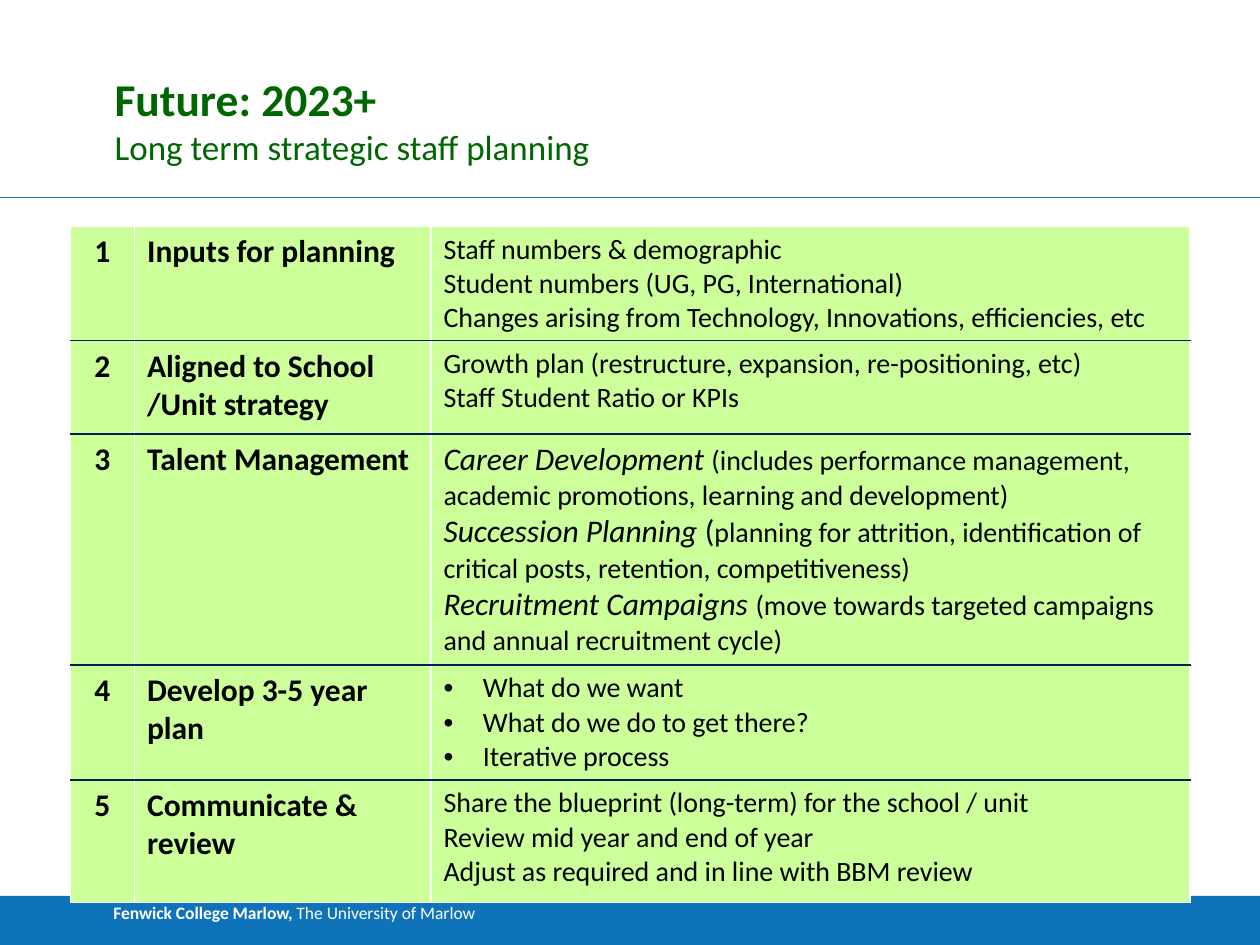
from lxml.etree import SubElement
from pptx import Presentation
from pptx.dml.color import RGBColor
from pptx.enum.shapes import MSO_CONNECTOR as Connector, MSO_SHAPE as Shape
from pptx.enum.text import MSO_ANCHOR as Anchor, PP_ALIGN as Align
from pptx.oxml.ns import qn
from pptx.util import Pt

WIDTH, HEIGHT = 720, 540
BLUE, NAVY, GREEN, LIME = "0E73B9", "002060", "006600", "CCFF99"
WHITE, BLACK = "FFFFFF", "000000"
COLUMNS = [36.7, 169.4, 433.7]
ROW_HEIGHTS = [65.5, 53.3, 132, 65.7, 70]

HEADING = dict(size=Pt(18), bold=True)
DETAIL = dict(size=Pt(16), bold=False)
TOPIC = dict(size=Pt(18), bold=False, italic=True)
LARGE = dict(size=Pt(18), bold=False)


def plain(*lines):
    return [[(line, DETAIL)] for line in lines]


ROWS = [
    ("Inputs for planning", plain(
        "Staff numbers & demographic",
        "Student numbers (UG, PG, International)",
        "Changes arising from Technology, Innovations, efficiencies, etc"), False),
    ("Aligned to School /Unit strategy", plain(
        "Growth plan (restructure, expansion, re-positioning, etc)",
        "Staff Student Ratio or KPIs"), False),
    ("Talent Management", [
        [("Career Development ", TOPIC),
         ("(includes performance management, academic promotions, "
          "learning and development)", DETAIL)],
        [("Succession Planning ", TOPIC), ("(", LARGE),
         ("planning for attrition, identification of critical posts, "
          "retention, competitiveness)", DETAIL)],
        [("Recruitment Campaigns ", TOPIC),
         ("(move towards targeted campaigns and annual recruitment cycle)", DETAIL)],
    ], False),
    ("Develop 3-5 year plan", plain(
        "What do we want", "What do we do to get there?", "Iterative process"), True),
    ("Communicate & review", plain(
        "Share the blueprint (long-term) for the school / unit",
        "Review mid year and end of year",
        "Adjust as required and in line with BBM review"), False),
]


def color(value):
    return RGBColor.from_string(value)


def set_all(target, values):
    for name, value in values.items():
        setattr(target, name, value)


def write(frame, paragraphs, ink, align=Align.LEFT, bulleted=False):
    for index, spans in enumerate(paragraphs):
        para = frame.add_paragraph() if index else frame.paragraphs[0]
        para.alignment = align
        if bulleted:
            add_bullet(para)
        for text, style in spans:
            span = para.add_run()
            span.text = text
            set_all(span.font, dict(name="Calibri", **style))
            span.font.color.rgb = color(ink)


def add_bullet(para):
    properties = para._p.get_or_add_pPr()
    properties.set("marL", str(Pt(22.5)))
    properties.set("indent", str(-Pt(22.5)))
    SubElement(properties, qn("a:buFont"), typeface="Arial")
    SubElement(properties, qn("a:buChar"), char="•")


def add_text(page, top, height, text, style, anchor):
    box = page.shapes.add_textbox(Pt(65.5), Pt(top), Pt(590), Pt(height))
    set_all(box.text_frame, dict(
        word_wrap=True, vertical_anchor=anchor, margin_left=0,
        margin_top=0, margin_right=0, margin_bottom=0))
    write(box.text_frame, [[(text, style)]], GREEN)


def add_footer(page):
    bar = page.shapes.add_shape(Shape.RECTANGLE, 0, Pt(512), Pt(WIDTH), Pt(28))
    bar.shadow.inherit = False
    bar.fill.solid()
    bar.fill.fore_color.rgb = color(BLUE)
    bar.line.fill.background()
    set_all(bar.text_frame, dict(
        word_wrap=True, vertical_anchor=Anchor.TOP, margin_left=Pt(64.8)))
    write(bar.text_frame, [[
        ("Fenwick College Marlow, ", dict(size=Pt(10), bold=True)),
        ("The University of Marlow", dict(size=Pt(10), bold=False)),
    ]], WHITE)


def add_rule(page, top):
    rule = page.shapes.add_connector(
        Connector.STRAIGHT, 0, Pt(top), Pt(WIDTH), Pt(top))
    rule.line.color.rgb = color(BLUE)
    rule.line.width = Pt(0.75)
    SubElement(rule._element.spPr, qn("a:effectLst"))


def style_cell(cell, top, bottom):
    properties = cell._tc.get_or_add_tcPr()
    edges = dict(lnL=WHITE, lnR=WHITE, lnT=top, lnB=bottom)
    for edge, ink in edges.items():
        line = SubElement(properties, qn(f"a:{edge}"), w=str(Pt(1)))
        fill = SubElement(line, qn("a:solidFill"))
        SubElement(fill, qn("a:srgbClr"), val=ink)
    cell.fill.solid()
    cell.fill.fore_color.rgb = color(LIME)


def add_plan_table(page):
    table = page.shapes.add_table(
        len(ROWS), len(COLUMNS), Pt(40.2), Pt(129.2),
        Pt(sum(COLUMNS)), Pt(sum(ROW_HEIGHTS))).table
    set_all(table, dict(first_row=False, horz_banding=False))
    for column, width in zip(table.columns, COLUMNS):
        column.width = Pt(width)
    for index, (heading, details, bulleted) in enumerate(ROWS):
        row = table.rows[index]
        row.height = Pt(ROW_HEIGHTS[index])
        number, title, detail = row.cells
        for cell in row.cells:
            style_cell(cell, NAVY if index else WHITE,
                       NAVY if index < len(ROWS) - 1 else WHITE)
        write(number.text_frame, [[(str(index + 1), HEADING)]], BLACK, Align.CENTER)
        write(title.text_frame, [[(heading, HEADING)]], BLACK)
        write(detail.text_frame, details, BLACK, bulleted=bulleted)


def main():
    deck = Presentation()
    set_all(deck, dict(slide_width=Pt(WIDTH), slide_height=Pt(HEIGHT)))
    page = deck.slides.add_slide(deck.slide_layouts[6])
    add_footer(page)
    add_rule(page, 113)
    add_text(page, 28, 44, "Future: 2023+", dict(size=Pt(26), bold=True), Anchor.BOTTOM)
    add_text(page, 72, 22, "Long term strategic staff planning",
             dict(size=Pt(20), bold=False), Anchor.TOP)
    add_plan_table(page)
    deck.save("out.pptx")


if __name__ == "__main__":
    main()
